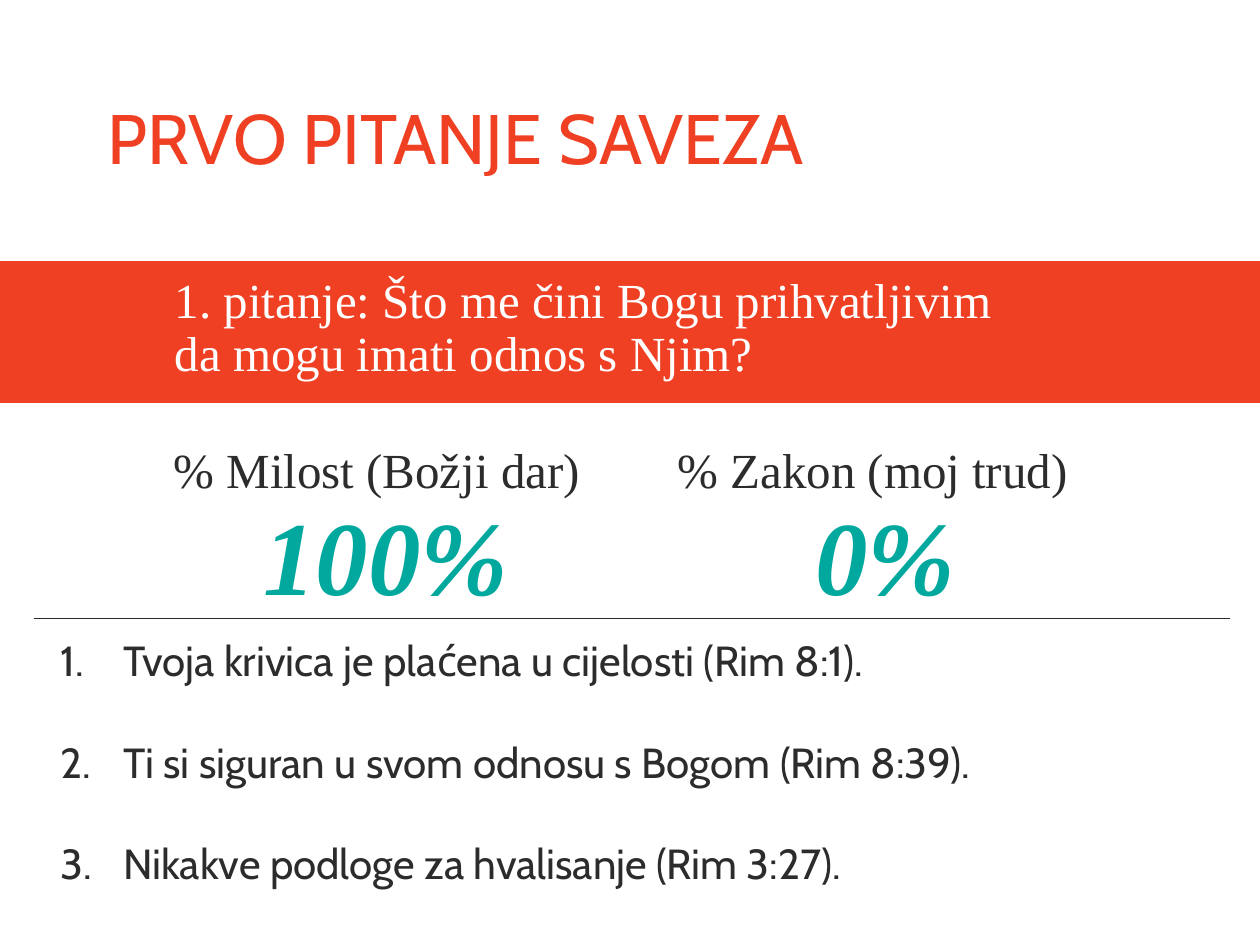
from lxml import etree
from pptx import Presentation
from pptx.dml.color import RGBColor
from pptx.enum.shapes import MSO_CONNECTOR, MSO_SHAPE
from pptx.enum.text import MSO_ANCHOR, PP_ALIGN
from pptx.oxml.ns import qn
from pptx.util import Inches, Pt

STRAIGHT = MSO_CONNECTOR.STRAIGHT
RECTANGLE = MSO_SHAPE.RECTANGLE
MIDDLE, TOP = MSO_ANCHOR.MIDDLE, MSO_ANCHOR.TOP
LEFT = PP_ALIGN.LEFT

COLORS = {"accent": "EF4023", "text": "2C2C2C", "percent": "01A89E", "white": "FFFFFF"}
SANS, SERIF = "Cabin", "Times New Roman"


class SlideBuilder:
    def __init__(self, prs):
        self.slide = prs.slides.add_slide(prs.slide_layouts[5])
        self.shapes = self.slide.shapes

    def color(self, name):
        return RGBColor.from_string(COLORS[name])

    def style_text(self, sp, lines, size, font, color, bold=False, spacing=1.0, anchor=TOP):
        tf = sp.text_frame
        tf.word_wrap = True
        tf.vertical_anchor = anchor
        tf.text = "\n".join(lines)
        for p in tf.paragraphs:
            p.alignment = LEFT
            p.line_spacing = spacing
            for r in p.runs:
                r.font.size, r.font.name = Pt(size), font
                r.font.bold = r.font.italic = bold
                r.font.color.rgb = self.color(color)
        return sp

    def title(self, box, text):
        sp = self.shapes.title
        sp.left, sp.top, sp.width, sp.height = map(Inches, box)
        self.style_text(sp, [text], 40, SANS, "accent", spacing=0.85, anchor=MIDDLE)

    def band(self, box, color):
        sp = self.shapes.add_shape(RECTANGLE, *map(Inches, box))
        sp.shadow.inherit = False
        sp.fill.solid()
        sp.fill.fore_color.rgb = sp.line.color.rgb = self.color(color)
        sp.line.width = Pt(1)

    def text(self, box, lines, size, font, color, **style):
        sp = self.shapes.add_textbox(*map(Inches, box))
        return self.style_text(sp, lines, size, font, color, **style)

    def columns(self, box, labels, tab, size, color, bold=False):
        sp = self.text(box, ["\t".join(labels)], size, SERIF, color, bold=bold)
        pPr = sp.text_frame.paragraphs[0]._p.get_or_add_pPr()
        tabs = etree.SubElement(pPr, qn("a:tabLst"))
        etree.SubElement(tabs, qn("a:tab"), pos=str(Inches(tab)), algn="l")

    def numbered(self, box, items, gap):
        sp = self.text(box, items, 24, SANS, "text")
        for p in sp.text_frame.paragraphs:
            p.space_after = Pt(gap)
            pPr = p._p.get_or_add_pPr()
            pPr.set("marL", str(Inches(0.5)))
            pPr.set("indent", str(-Inches(0.5)))
            etree.SubElement(pPr, qn("a:buFont"), typeface="+mj-lt")
            etree.SubElement(pPr, qn("a:buAutoNum"), type="arabicPeriod")

    def rule(self, x1, x2, y):
        line = self.shapes.add_connector(STRAIGHT, Inches(x1), Inches(y), Inches(x2), Inches(y))
        line.line.color.rgb = self.color("text")
        line.line.width = Pt(0.75)
        etree.SubElement(line._element.spPr, qn("a:effectLst"))


def main():
    prs = Presentation()
    prs.slide_width, prs.slide_height = Inches(10), Inches(7.5)
    s = SlideBuilder(prs)

    # Title and question band
    s.title((0.75, 0.31, 8.5, 1.65), "PRVO PITANJE SAVEZA")
    s.band((0, 2.08, 10, 1.11), "accent")
    s.text((1.29, 2.14, 7.44, 1), ["1. pitanje: Što me čini Bogu prihvatljivim\vda mogu imati odnos s Njim?"],
           28, SERIF, "white", spacing=0.9)

    # Grace and law, with their shares
    s.columns((1.28, 3.44, 7.74, 0.55), ["% Milost (Božji dar)", "% Zakon (moj trud)"], 4, 28, "text")
    s.columns((1.99, 3.84, 6.25, 1.11), ["100%", "0%"], 4.38, 60, "percent", bold=True)

    # Consequences
    s.rule(0.27, 9.76, 4.91)
    s.numbered((0.38, 4.99, 9.62, 2.12), [
        "Tvoja krivica je plaćena u cijelosti (Rim 8:1).",
        "Ti si siguran u svom odnosu s Bogom (Rim 8:39).",
        "Nikakve podloge za hvalisanje (Rim 3:27).",
    ], 29)

    prs.save("out.pptx")


if __name__ == "__main__":
    main()
